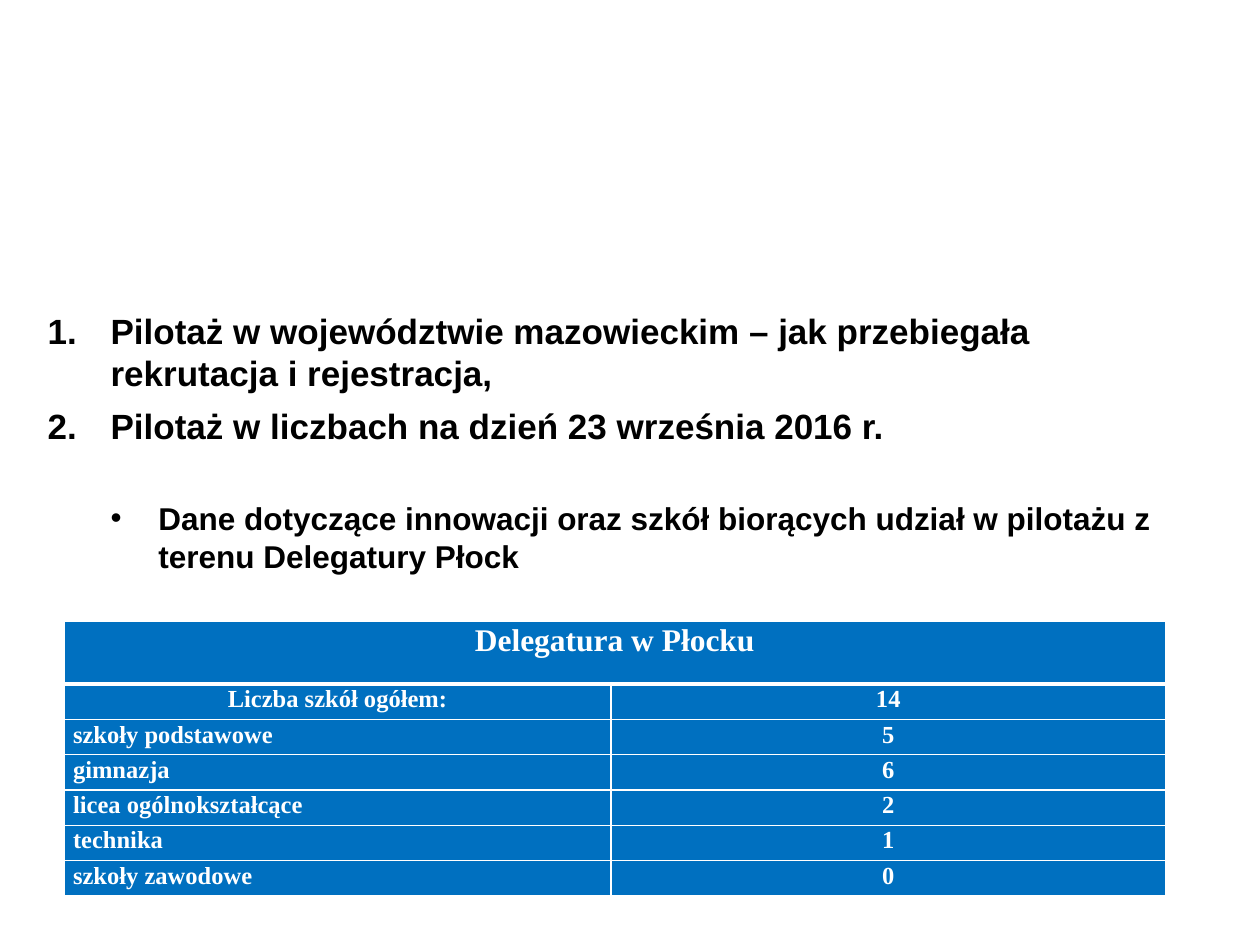
from lxml.etree import SubElement
from pptx import Presentation
from pptx.dml.color import RGBColor
from pptx.enum.text import PP_ALIGN as Align
from pptx.oxml.ns import qn
from pptx.util import Inches, Pt

BLACK = RGBColor(0, 0, 0)
WHITE = RGBColor(255, 255, 255)
BLUE = RGBColor(0x00, 0x70, 0xC0)


def write(para, text, size, font, color):
    run = para.add_run()
    run.text = text
    run.font.size = Pt(size)
    run.font.name = font
    run.font.bold = True
    run.font.color.rgb = color


def border(cell, side, width):
    line = SubElement(cell._tc.get_or_add_tcPr(), qn(f"a:ln{side}"), w=str(Pt(width)))
    fill = SubElement(line, qn("a:solidFill"))
    SubElement(fill, qn("a:srgbClr"), val=str(WHITE))


prs = Presentation()
prs.slide_width, prs.slide_height = Inches(10), Inches(7.5)
slide = prs.slides.add_slide(prs.slide_layouts[6])

# Agenda: text, size, level, indent, hang, space before, space after
agenda = [
    ("Pilotaż w województwie mazowieckim – jak przebiegała rekrutacja i rejestracja,",
     20, 0, 0.5, 0.5, 0, 6),
    ("Pilotaż w liczbach na dzień 23 września 2016 r.", 20, 0, 0.5, 0.5, 0, 6),
    ("Dane dotyczące innowacji oraz szkół biorących udział w pilotażu z terenu Delegatury Płock",
     18, 1, 0.88, 0.38, 24, 0),
]
box = slide.shapes.add_textbox(Inches(0.28), Inches(2.41), Inches(9.13), Inches(2.4))
frame = box.text_frame
frame.word_wrap = True
for i, (text, size, level, indent, hang, before, after) in enumerate(agenda):
    para = frame.add_paragraph() if i else frame.paragraphs[0]
    para.level = level
    props = para._p.get_or_add_pPr()
    props.set("marL", str(Inches(indent)))
    props.set("indent", str(-Inches(hang)))
    if level:
        SubElement(props, qn("a:buFont"), typeface="Arial")
        SubElement(props, qn("a:buChar"), char="•")
    else:
        SubElement(props, qn("a:buFont"), typeface="+mj-lt")
        SubElement(props, qn("a:buAutoNum"), type="arabicPeriod")
    para.space_before, para.space_after = Pt(before), Pt(after)
    write(para, text, size, "Arial", BLACK)

# School counts
rows = [
    ("Delegatura w Płocku", ""),
    ("Liczba szkół ogółem:", "14"),
    ("szkoły podstawowe", "5"),
    ("gimnazja", "6"),
    ("licea ogólnokształcące", "2"),
    ("technika", "1"),
    ("szkoły zawodowe", "0"),
]
table = slide.shapes.add_table(len(rows), 2, Inches(0.51), Inches(4.93),
                               Inches(8.74), Inches(2.22)).table
for col, width in zip(table.columns, (4.34, 4.4)):
    col.width = Inches(width)
table.cell(0, 0).merge(table.cell(0, 1))
for r, row in enumerate(rows):
    table.rows[r].height = Inches(0.28 if r else 0.5)
    for c, text in enumerate(row):
        cell = table.cell(r, c)
        cell.margin_left = cell.margin_right = Inches(0.07)
        cell.margin_top = cell.margin_bottom = 0
        for side in "LRTB":
            thick = (r, side) in ((0, "B"), (1, "T"))
            border(cell, side, 3 if thick else 1)
        cell.fill.solid()
        cell.fill.fore_color.rgb = BLUE
        if text:
            para = cell.text_frame.paragraphs[0]
            para.alignment = Align.CENTER if c or r < 2 else Align.LEFT
            para.line_spacing = 1.07
            write(para, text, 14 if r else 18, "Times New Roman", WHITE)

prs.save("out.pptx")
